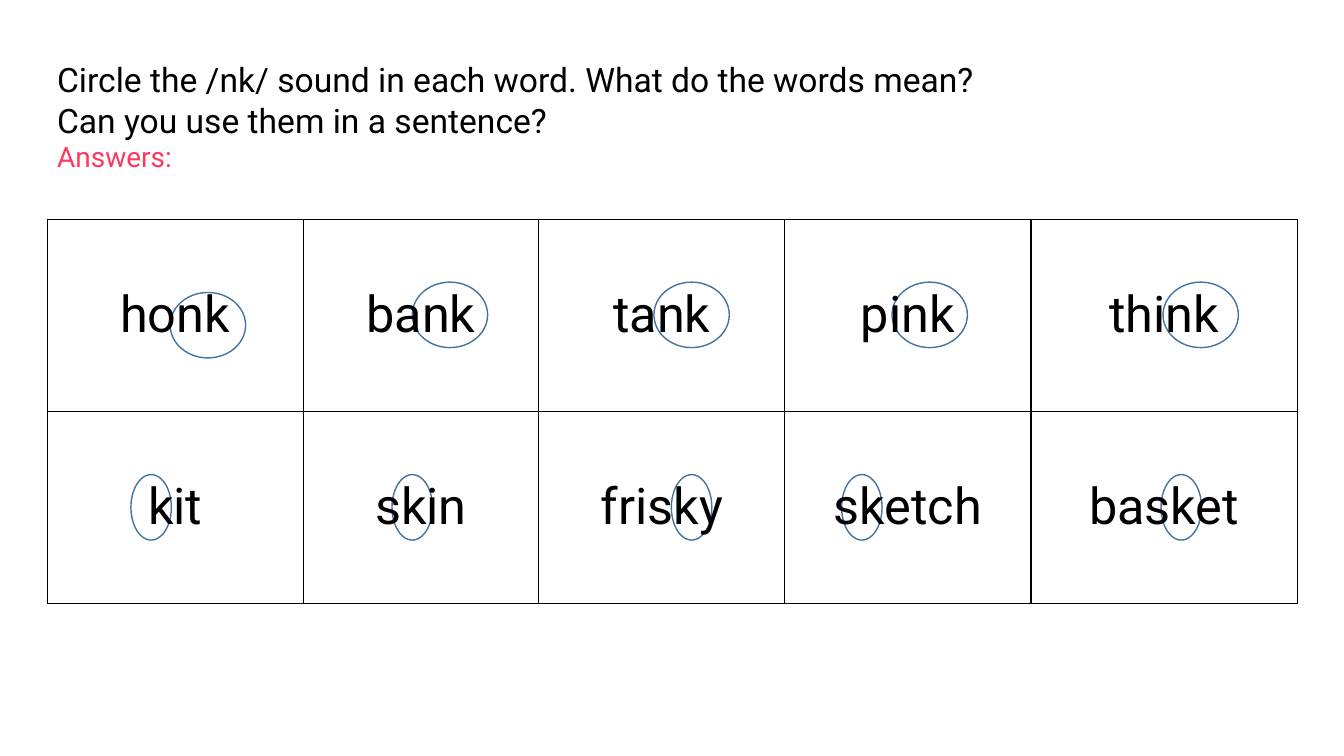
import pptx
import pptx.util
import pptx.dml.color
import pptx.enum.shapes
import pptx.enum.text
import lxml.etree
from pptx.util import Cm, Pt

NS = "http://schemas.openxmlformats.org/drawingml/2006/main"


def color(code):
    return pptx.dml.color.RGBColor.from_string(code)


def border(cell):
    """Draw a thin black line on all four sides of a cell, with no fill."""
    props = cell._tc.get_or_add_tcPr()
    for side in ("lnL", "lnR", "lnT", "lnB"):
        line = lxml.etree.SubElement(props, f"{{{NS}}}{side}", w=str(Pt(1)))
        fill = lxml.etree.SubElement(line, f"{{{NS}}}solidFill")
        lxml.etree.SubElement(fill, f"{{{NS}}}srgbClr", val="000000")
    cell.fill.background()


deck = pptx.Presentation()
deck.slide_width, deck.slide_height = Cm(33.87), Cm(19.05)
slide = deck.slides.add_slide(deck.slide_layouts[6])

# Task text
box = slide.shapes.add_textbox(Cm(1.19), Cm(1.37), Cm(23.83), Cm(3.18))
frame = box.text_frame
frame.word_wrap = True
frame.auto_size = pptx.enum.text.MSO_AUTO_SIZE.SHAPE_TO_FIT_TEXT
lines = [
    ("Circle the /nk/ sound in each word. What do the words mean? "
     "Can you use them in a sentence?", 24, "000000"),
    ("Answers:", 20, "FF3860"),
]
for i, (text, size, code) in enumerate(lines):
    para = frame.add_paragraph() if i else frame.paragraphs[0]
    para.text = text
    font = para.runs[0].font
    font.name, font.size = "Roboto", Pt(size)
    font.color.rgb = color(code)

# Answer rings, behind the words: ring width, then left and top of each
rings = [
    (1.9, [(4.29, 7.37), (10.39, 7.11), (16.48, 7.11), (22.48, 7.11), (29.31, 7.11)]),
    (1.02, [(left, 11.96) for left in (3.3, 9.88, 16.92, 21.21, 29.26)]),
]
for width, spots in rings:
    for left, top in spots:
        ring = slide.shapes.add_shape(
            pptx.enum.shapes.MSO_SHAPE.OVAL, Cm(left), Cm(top), Cm(width), Cm(1.65))
        ring.shadow.inherit = False
        ring.fill.solid()
        ring.fill.fore_color.rgb = color("FFFFFF")
        ring.line.color.rgb = color("43739E")
        ring.line.width = Pt(1)

# Word table
words = [
    ["honk", "bank", "tank", "pink", "think"],
    ["kit", "skin", "frisky", "sketch", "basket"],
]
widths = [6.45, 5.94, 6.2, 6.2, 6.71]
height = 4.83
table = slide.shapes.add_table(
    len(words), len(widths), Cm(1.19), Cm(5.54),
    Cm(sum(widths)), Cm(height * len(words))).table
table.first_row = table.horz_banding = False
for col, width in zip(table.columns, widths):
    col.width = Cm(width)
for r, row in enumerate(words):
    table.rows[r].height = Cm(height)
    for c, word in enumerate(row):
        cell = table.cell(r, c)
        border(cell)
        cell.vertical_anchor = pptx.enum.text.MSO_ANCHOR.MIDDLE
        para = cell.text_frame.paragraphs[0]
        para.text = word
        para.alignment = pptx.enum.text.PP_ALIGN.CENTER
        font = para.runs[0].font
        font.name, font.size = "Roboto", Pt(36)
        font.color.rgb = color("000000")

deck.save("out.pptx")
